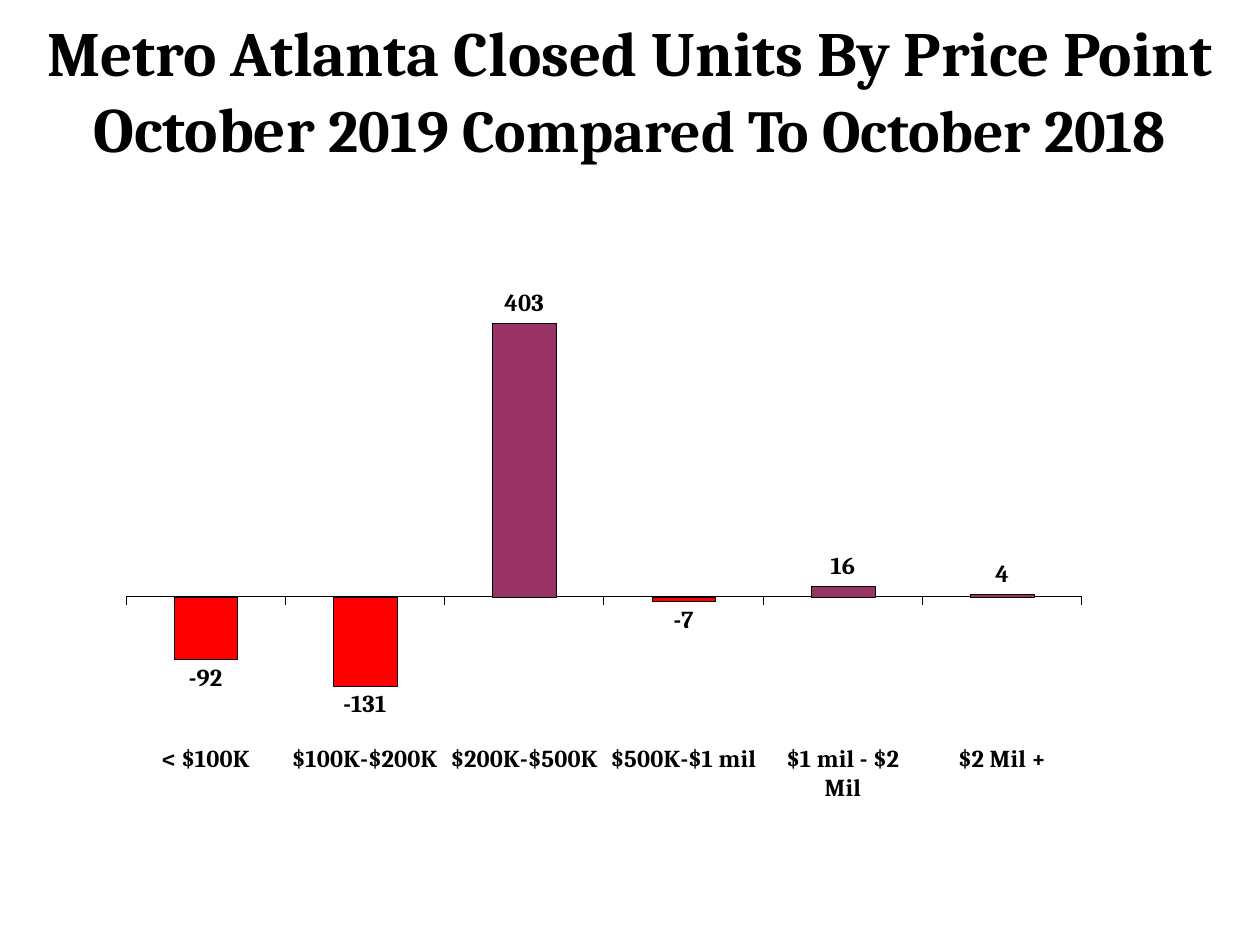
import pptx
import pptx.chart.data
import pptx.dml.color
import pptx.enum.chart
import pptx.enum.text
import pptx.oxml
import pptx.oxml.ns
import pptx.util

Cm, Pt = pptx.util.Cm, pptx.util.Pt
FONT = "Cambria"
COLORS = {"text": "000000", "gain": "993366", "loss": "FF0000"}
UNIT_CHANGES = {
    "< $100K": -92,
    "$100K-$200K": -131,
    "$200K-$500K": 403,
    "$500K-$1 mil": -7,
    "$1 mil - $2 Mil": 16,
    "$2 Mil +": 4,
}


def rgb(name):
    return pptx.dml.color.RGBColor.from_string(COLORS[name])


def style_font(font, size):
    font.name, font.size, font.bold = FONT, Pt(size), True
    font.color.rgb = rgb("text")


def add_title(s, left, top, width, height):
    tf = s.shapes.add_textbox(left, top, width, height).text_frame
    tf.word_wrap = True
    tf.vertical_anchor = pptx.enum.text.MSO_ANCHOR.MIDDLE
    p = tf.paragraphs[0]
    p.alignment = pptx.enum.text.PP_ALIGN.CENTER

    def add_run(text, size):
        r = p.add_run()
        r.text = text
        style_font(r.font, size)

    add_run("Metro Atlanta Closed Units By Price Point", 36)
    p.add_line_break()
    add_run("October ", 36)
    add_run("2019 Compared To October 2018", 34)


def set_plot_area(chart, x, y, w, h):
    """Fix the inner plot area, in fractions of the chart."""
    plot_area = chart._chartSpace.chart.plotArea
    for old in plot_area.findall(pptx.oxml.ns.qn("c:layout")):
        plot_area.remove(old)
    plot_area.insert(0, pptx.oxml.parse_xml(
        f'<c:layout {pptx.oxml.ns.nsdecls("c")}><c:manualLayout>'
        '<c:layoutTarget val="inner"/><c:xMode val="edge"/><c:yMode val="edge"/>'
        f'<c:x val="{x}"/><c:y val="{y}"/><c:w val="{w}"/><c:h val="{h}"/>'
        '</c:manualLayout></c:layout>'))


def add_unit_chart(s, left, top, width, height):
    data = pptx.chart.data.CategoryChartData(number_format="0")
    data.categories = list(UNIT_CHANGES)
    data.add_series("Series 1", list(UNIT_CHANGES.values()))
    chart = s.shapes.add_chart(
        pptx.enum.chart.XL_CHART_TYPE.COLUMN_CLUSTERED,
        left, top, width, height, data).chart
    chart.has_legend = False
    chart.has_title = False
    style_font(chart.font, 14)
    set_plot_area(chart, 0, 0.206, 0.878, 0.696)

    # Axes
    axis = chart.category_axis
    axis.tick_label_position = pptx.enum.chart.XL_TICK_LABEL_POSITION.LOW
    axis.major_tick_mark = pptx.enum.chart.XL_TICK_MARK.OUTSIDE
    axis.format.line.color.rgb = rgb("text")
    axis.format.line.width = Pt(0.01)
    axis = chart.value_axis
    axis.minimum_scale, axis.maximum_scale = -200, 500
    axis.has_major_gridlines = False
    axis.visible = False

    # Columns, with losses picked out
    plot = chart.plots[0]
    plot.gap_width = 150
    plot.vary_by_categories = False
    series = plot.series[0]
    series.invert_if_negative = False

    def style_column(fmt, color):
        fmt.fill.solid()
        fmt.fill.fore_color.rgb = rgb(color)
        fmt.line.color.rgb = rgb("text")
        fmt.line.width = Pt(0.06)

    style_column(series.format, "gain")
    for i, value in enumerate(UNIT_CHANGES.values()):
        if value < 0:
            style_column(series.points[i].format, "loss")

    # Value labels
    labels = series.data_labels
    labels.show_value = True
    labels.number_format = "0"
    labels.number_format_is_linked = False
    labels.position = pptx.enum.chart.XL_LABEL_POSITION.OUTSIDE_END
    style_font(labels.font, 14)


def main():
    prs = pptx.Presentation()
    prs.slide_width, prs.slide_height = Cm(25.4), Cm(19.05)
    s = prs.slides.add_slide(prs.slide_layouts[6])
    add_title(s, 0, Cm(1.27), prs.slide_width, Cm(1.07))
    add_unit_chart(s, Cm(2.54), Cm(2.34), Cm(21.95), Cm(13.84))
    prs.save("out.pptx")


if __name__ == "__main__":
    main()
